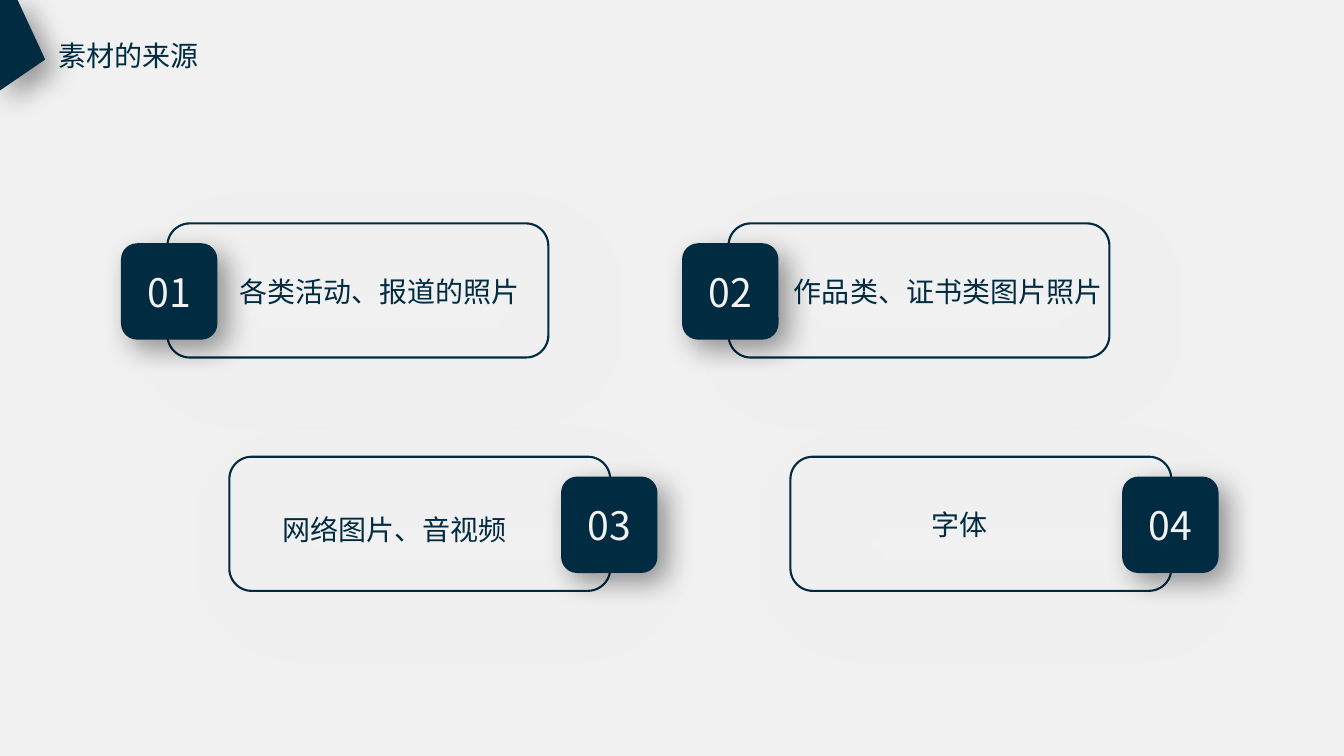
from lxml import etree
from pptx import Presentation
from pptx.dml.color import RGBColor
from pptx.enum import shapes, text
from pptx.oxml import ns
from pptx.util import Cm, Pt

COLORS = {"navy": "002B41", "background": "F1F1F1", "number": "F2F2F2",
          "black": "000000", "gray": "808080"}
FONT = "Noto Sans CJK SC"
DARK_SHADOW = ("black", 40, 20, 10)
SOFT_SHADOW = ("gray", 20, 50, 20)


def write(shape, words, size, color, align, anchor=text.MSO_ANCHOR.TOP, spacing=None):
    frame = shape.text_frame
    frame.text = words
    frame.vertical_anchor = anchor
    paragraph = frame.paragraphs[0]
    paragraph.alignment = align
    if spacing:
        paragraph.line_spacing = spacing
    font = paragraph.runs[0].font
    font.size = Pt(size)
    font.name = FONT
    font.color.rgb = RGBColor.from_string(COLORS[color])
    latin = font._element.find(ns.qn("a:latin"))
    east_asian = etree.Element(ns.qn("a:ea"), typeface=FONT)
    latin.addnext(east_asian)


def paint(shape, shadow, filled=True):
    """Give a shape a navy fill or outline, and a shadow falling at 45 degrees."""
    navy = RGBColor.from_string(COLORS["navy"])
    if filled:
        shape.fill.solid()
        shape.fill.fore_color.rgb = navy
        shape.line.fill.background()
    else:
        shape.fill.background()
        shape.line.color.rgb = navy
        shape.line.width = Pt(1.5)
    shape.shadow.inherit = False
    color, opacity, blur, distance = shadow
    effects = shape._element.spPr.find(ns.qn("a:effectLst"))
    outer = etree.SubElement(effects, ns.qn("a:outerShdw"), blurRad=str(Pt(blur)),
                             dist=str(Pt(distance)), dir=str(45 * 60000),
                             algn="tl", rotWithShape="0")
    tint = etree.SubElement(outer, ns.qn("a:srgbClr"), val=COLORS[color])
    etree.SubElement(tint, ns.qn("a:alpha"), val=str(opacity * 1000))


presentation = Presentation()
presentation.slide_width = Cm(33.87)
presentation.slide_height = Cm(19.05)
slide = presentation.slides.add_slide(presentation.slide_layouts[5])
slide.background.fill.solid()
slide.background.fill.fore_color.rgb = RGBColor.from_string(COLORS["background"])

title = slide.shapes.title
title.left, title.top, title.width, title.height = Cm(1.22), Cm(0.84), Cm(4.5), Cm(1.12)
write(title, "素材的来源", 20, "navy", text.PP_ALIGN.LEFT)
title.text_frame.word_wrap = True
title.text_frame.auto_size = text.MSO_AUTO_SIZE.NONE

# Corner ornament
builder = slide.shapes.build_freeform(Cm(0.43), Cm(-0.03))
builder.add_line_segments([(Cm(0), Cm(-0.03)), (Cm(0), Cm(2.28)), (Cm(1.14), Cm(1.5))])
paint(builder.convert_to_shape(), DARK_SHADOW)

# Cards: two columns, with the number on the left above and on the right below
COLUMN_STEP, ROW_STEP = 14.14, 5.88
FRAME_LEFTS, BADGE_LEFTS = (4.22, 5.78), (3.05, 14.14)
LEFT, CENTER = text.PP_ALIGN.LEFT, text.PP_ALIGN.CENTER
# caption, left, top, width, alignment
cards = [
    ("各类活动、报道的照片", 5.78, 6.53, 7.77, LEFT),
    ("作品类、证书类图片照片", 19.76, 6.53, 8.84, LEFT),
    ("网络图片、音视频", 6.06, 12.54, 7.77, CENTER),
    ("字体", 21.95, 12.42, 4.45, CENTER),
]
for index, (caption, left, top, width, align) in enumerate(cards):
    row, column = divmod(index, 2)
    across, down = column * COLUMN_STEP, row * ROW_STEP

    frame = slide.shapes.add_shape(
        shapes.MSO_SHAPE.ROUNDED_RECTANGLE,
        Cm(FRAME_LEFTS[row] + across), Cm(5.63 + down), Cm(9.6), Cm(3.38))
    paint(frame, SOFT_SHADOW, filled=False)

    badge = slide.shapes.add_shape(
        shapes.MSO_SHAPE.ROUNDED_RECTANGLE,
        Cm(BADGE_LEFTS[row] + across), Cm(6.13 + down), Cm(2.43), Cm(2.43))
    paint(badge, DARK_SHADOW)
    write(badge, f"{index + 1:02d}", 28, "number", CENTER, text.MSO_ANCHOR.MIDDLE)

    label = slide.shapes.add_textbox(Cm(left), Cm(top), Cm(width), Cm(1.37))
    label.text_frame.word_wrap = True
    write(label, caption, 20, "navy", align, spacing=1.3)

presentation.save("out.pptx")
